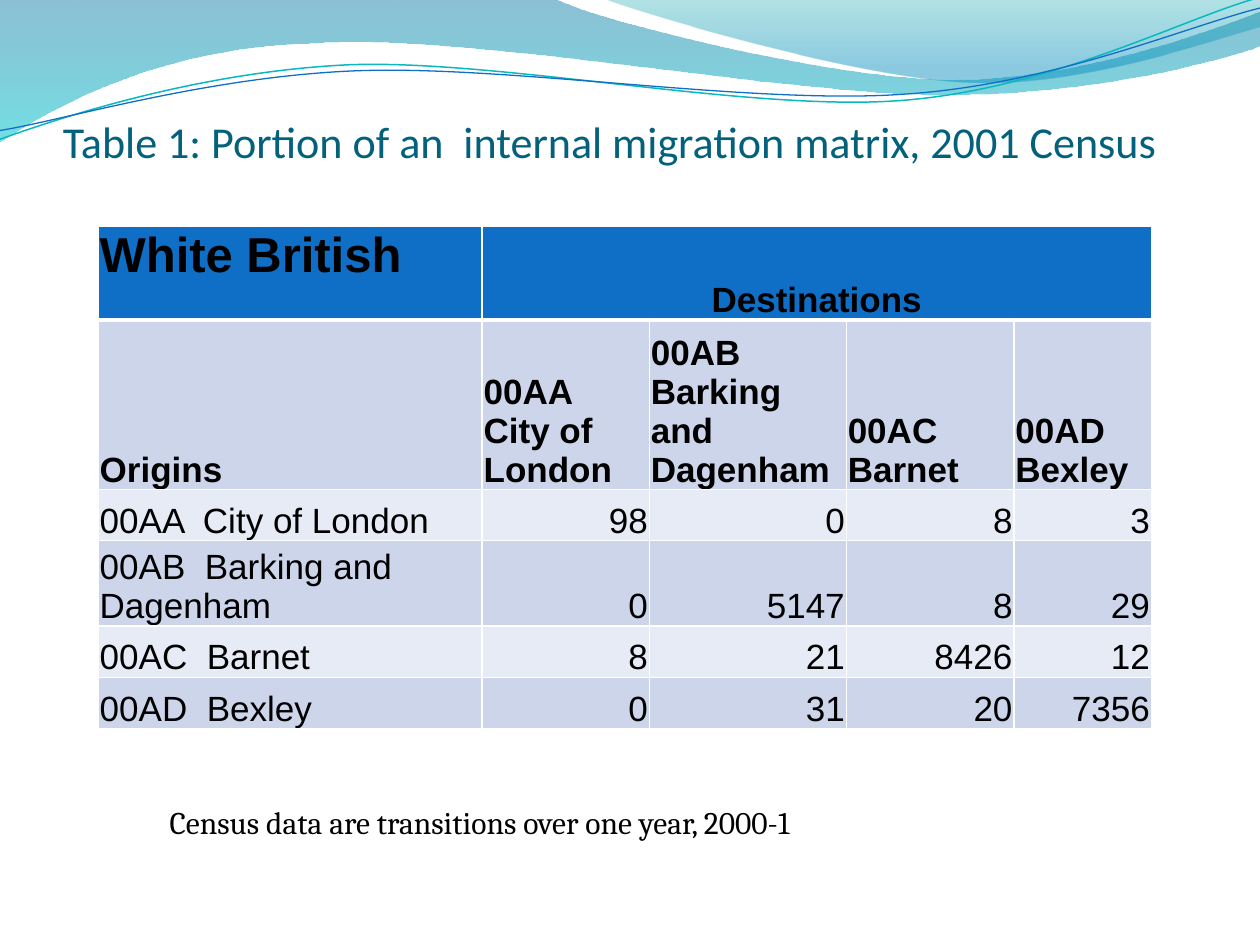
from lxml import etree
from pptx import Presentation
from pptx.dml.color import RGBColor
from pptx.enum.text import MSO_ANCHOR, MSO_AUTO_SIZE, PP_ALIGN
from pptx.oxml.ns import qn
from pptx.util import Cm, Pt

TOP, LOW = MSO_ANCHOR.TOP, MSO_ANCHOR.BOTTOM
LEFT, MID, RIGHT = PP_ALIGN.LEFT, PP_ALIGN.CENTER, PP_ALIGN.RIGHT
GROW = MSO_AUTO_SIZE.SHAPE_TO_FIT_TEXT
HUES = {"title": "04617B", "text": "000000", "head": "0F6FC6", "band": "CCD5EA",
        "pale": "E7EBF5", "edge": "FFFFFF", "teal": "0AB8BF", "navy": "0074A1",
        "aqua": "00C6CF", "sea": "00A1A9", "sky": "008BBF"}
RGB = {name: RGBColor.from_string(hue) for name, hue in HUES.items()}
UNIT = 1000  # path steps to the inch


def trace(start, parts, closed):
    """Draw a path in inches; a part is one line end or three Bézier points."""
    ends = [part[-2:] for part in parts]
    pen = slide.shapes.build_freeform(start[0] * UNIT, start[1] * UNIT, Cm(2.54) / UNIT)
    pen.add_line_segments([(x * UNIT, y * UNIT) for x, y in ends], close=closed)
    shape = pen.convert_to_shape()
    shape.shadow.inherit = False
    left, top = (min(axis) for axis in zip(start, *ends))
    lines = list(shape._element.spPr.iter(qn("a:lnTo")))
    for line, part in zip(lines, parts):
        if len(part) == 6:
            bend = etree.Element(qn("a:cubicBezTo"))
            for x, y in zip(part[::2], part[1::2]):
                etree.SubElement(bend, qn("a:pt"), x=str(round((x - left) * UNIT)),
                                 y=str(round((y - top) * UNIT)))
            line.getparent().replace(line, bend)
    return shape


def write(frame, text, align, font):
    para = frame.paragraphs[0]
    para.alignment = align
    run = para.add_run()
    run.text = text
    run.font.color.rgb = RGB[font["hue"]]
    for key in ("name", "size", "bold"):
        setattr(run.font, key, font[key])


deck = Presentation()
deck.slide_width, deck.slide_height = Cm(25.4), Cm(19.05)
slide = deck.slides.add_slide(deck.slide_layouts[6])

# Waves across the top: start, parts, gradient stops (place, hue, opacity)
waves = [
    ((0, 0), [(4.4, -0.01), (4.76, 0.17, 6.64, 0.63, 7.58, 0.63),
              (8.53, 0.63, 9.58, 0.26, 10, 0.09), (10.01, 0.36),
              (9.83, 0.44, 8.7, 0.76, 7.46, 0.75), (6.22, 0.75, 3.82, 0.28, 2.57, 0.34),
              (1.29, 0.36, 0.46, 0.83, -0.01, 1.13)],
     [(0, "navy", 45), (1, "aqua", 55)]),
    ((4.79, -0.01), [(5.09, 0.11, 6.82, 0.62, 7.69, 0.65),
                     (8.56, 0.69, 9.61, 0.32, 10, 0.21), (10, 0)],
     [(0, "sea", 30), (0.8, "sky", 45)]),
]
for start, parts, stops in waves:
    wave = trace(start, parts, True)
    wave.line.fill.background()
    wave.fill.gradient()
    wave.fill.gradient_angle = 270
    for stop, (place, hue, _) in zip(wave.fill.gradient_stops, stops):
        stop.position = place
        stop.color.rgb = RGB[hue]
    for tint, (_, _, solid) in zip(wave._element.spPr.iter(qn("a:srgbClr")), stops):
        etree.SubElement(tint, qn("a:alpha")).set("val", str(solid * 1000))

# Thin curls, drawn level and then tilted
curls = [
    ((-0.02, 0.87), [(0.47, 0.72, 1.58, 0.41, 2.77, 0.41),
                     (3.96, 0.42, 5.91, 0.93, 7.12, 0.9),
                     (8.32, 0.87, 9.39, 0.36, 10, 0.22)], "teal", 0.85),
    ((-0.02, 0.8), [(0.46, 0.75, 1.64, 0.45, 2.83, 0.46),
                    (4.03, 0.47, 5.96, 0.88, 7.16, 0.85),
                    (8.35, 0.83, 9.42, 0.42, 10.02, 0.3)], "head", 0.75),
]
for start, parts, hue, width in curls:
    curl = trace(start, parts, False)
    curl.rotation = 357.3
    curl.fill.background()
    curl.line.color.rgb = RGB[hue]
    curl.line.width = Pt(width)

# Title and note
inset = {"margin_left": 0, "margin_right": 0, "margin_bottom": 0, "vertical_anchor": LOW}
labels = [
    ((1.27, 1.96, 23.34, 1.42), "Table 1: Portion of an  internal migration matrix, 2001 Census",
     {"name": "Calibri", "size": Pt(25.2), "bold": False, "hue": "title"}, inset),
    ((3.17, 16.07, 16.28, 1.02), "Census data are transitions over one year, 2000-1",
     {"name": "Cambria", "size": Pt(18), "bold": False, "hue": "text"}, {"auto_size": GROW}),
]
for area, text, font, form in labels:
    frame = slide.shapes.add_textbox(*map(Cm, area)).text_frame
    frame.word_wrap = True
    for key, value in form.items():
        setattr(frame, key, value)
    write(frame, text, LEFT, font)

# Migration matrix
places = ["00AA  City of London", "00AB  Barking and Dagenham", "00AC  Barnet", "00AD  Bexley"]
flows = [[98, 0, 8, 3], [0, 5147, 8, 29], [8, 21, 8426, 12], [0, 31, 20, 7356]]
rows = [["White British", "Destinations", "", "", ""], ["Origins", *places]]
rows += [[place, *flow] for place, flow in zip(places, flows)]
wide = [7.74, 3.37, 3.97, 3.38, 2.77]
high = [1.88] + [1.03] * 5

holder = slide.shapes.add_table(len(rows), len(wide), Cm(1.98), Cm(4.57),
                                Cm(sum(wide)), Cm(sum(high)))
grid = holder.table
for col, size in zip(grid.columns, wide):
    col.width = Cm(size)
for row, size in zip(grid.rows, high):
    row.height = Cm(size)
holder.height = Cm(10.29)
grid.cell(0, 1).merge(grid.cell(0, 4))

pad = {"margin_left": Cm(0.03), "margin_right": Cm(0.03), "margin_top": Cm(0.03),
       "margin_bottom": 0}
for r, row in enumerate(rows):
    for c, value in enumerate(row):
        cell = grid.cell(r, c)
        corner = r == c == 0
        look = {**pad, "vertical_anchor": TOP if corner else LOW}
        for key, item in look.items():
            setattr(cell, key, item)
        for side in "LRTB":
            thick = 3 if (r, side) in ((0, "B"), (1, "T")) else 1
            edge = etree.SubElement(cell._tc.get_or_add_tcPr(), qn(f"a:ln{side}"),
                                    w=str(Pt(thick)))
            fill = etree.SubElement(edge, qn("a:solidFill"))
            etree.SubElement(fill, qn("a:srgbClr"), val=HUES["edge"])
        cell.fill.solid()
        cell.fill.fore_color.rgb = RGB["head" if r == 0 else "band" if r % 2 else "pale"]
        if value != "":
            align = MID if r == 0 and c else RIGHT if r > 1 and c else LEFT
            write(cell.text_frame, str(value), align,
                  {"name": "Arial", "size": Pt(28 if corner else 20), "bold": r < 2,
                   "hue": "text"})

deck.save("out.pptx")
